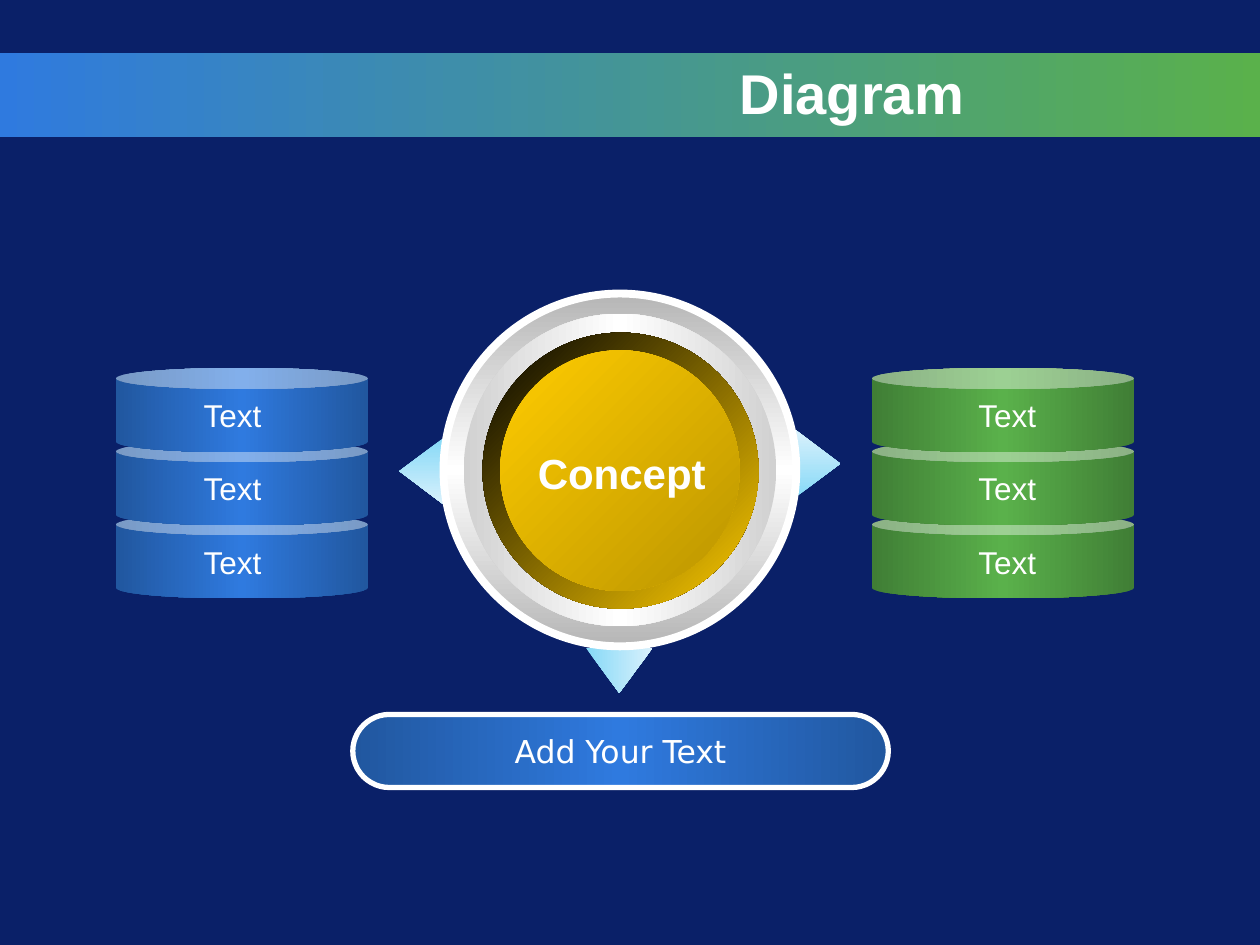
from dataclasses import dataclass

from lxml import etree
from pptx import Presentation
from pptx.dml.color import RGBColor
from pptx.enum.shapes import MSO_SHAPE
from pptx.enum.text import MSO_ANCHOR, MSO_AUTO_SIZE, PP_ALIGN
from pptx.oxml.ns import qn
from pptx.util import Inches, Pt

RECT, ELLIPSE, CAN = MSO_SHAPE.RECTANGLE, MSO_SHAPE.OVAL, MSO_SHAPE.CAN
UP_ARROW, PILL = MSO_SHAPE.UP_ARROW, MSO_SHAPE.ROUNDED_RECTANGLE
TOP, MIDDLE = MSO_ANCHOR.TOP, MSO_ANCHOR.MIDDLE
CENTER, RIGHT = PP_ALIGN.CENTER, PP_ALIGN.RIGHT
FIT = MSO_AUTO_SIZE.SHAPE_TO_FIT_TEXT

COLORS = {
    "background": "0A2068",
    "white": "FFFFFF",
    "black": "000000",
    "blue": "2F7ADF",
    "green": "5AB14B",
    "gold": "FFCC00",
    "sky": "85D9F7",
    "pale sky": "DAF1FC",
}
EDGE_SHADE = 46275  # thousandths of a percent of the base colour


@dataclass(frozen=True)
class Stop:
    position: int
    color: str
    shade: int = 0


@dataclass(frozen=True)
class Box:
    left: float
    top: float
    width: float
    height: float

    def lengths(self) -> list:
        return [Inches(v) for v in (self.left, self.top, self.width, self.height)]


@dataclass(frozen=True)
class Stack:
    color: str
    left: float
    width: float
    label_left: float


@dataclass(frozen=True)
class Pointer:
    box: Box
    rotation: int


@dataclass(frozen=True)
class Disc:
    box: Box
    stops: tuple
    angle: int
    outline: float = 0


def sheen(color: str, shade: int = EDGE_SHADE) -> tuple:
    """Bright in the middle, darker at both ends."""
    return Stop(0, color, shade), Stop(50, color), Stop(100, color, shade)


def set_gradient(shape, stops: tuple, angle: int) -> None:
    shape.fill.gradient()
    gradient = shape._element.spPr.find(qn("a:gradFill"))
    stop_list = gradient.find(qn("a:gsLst"))
    for old_stop in list(stop_list):
        stop_list.remove(old_stop)
    for stop in stops:
        entry = etree.SubElement(stop_list, qn("a:gs"), pos=str(stop.position * 1000))
        color = etree.SubElement(entry, qn("a:srgbClr"), val=COLORS[stop.color])
        if stop.shade:
            etree.SubElement(color, qn("a:shade"), val=str(stop.shade))
    gradient.find(qn("a:lin")).set("ang", str(angle * 60000))


def add_filled(slide, kind, box: Box, stops: tuple, angle: int = 0,
               outline: float = 0, adjustments: tuple = ()):
    shape = slide.shapes.add_shape(kind, *box.lengths())
    shape.shadow.inherit = False
    for index, value in enumerate(adjustments):
        shape.adjustments[index] = value
    set_gradient(shape, stops, angle)
    if outline:
        shape.line.color.rgb = RGBColor.from_string(COLORS["white"])
        shape.line.width = Pt(outline)
    else:
        shape.line.fill.background()
    return shape


def write(shape, text: str, size: float, font: str = "Arial", bold: bool = False,
          align=CENTER, anchor=TOP, wrap: bool = False) -> None:
    frame = shape.text_frame
    for name, value in {"word_wrap": wrap, "vertical_anchor": anchor}.items():
        setattr(frame, name, value)
    paragraph = frame.paragraphs[0]
    paragraph.alignment = align
    run = paragraph.add_run()
    run.text = text
    for name, value in {"size": Pt(size), "name": font, "bold": bold}.items():
        setattr(run.font, name, value)
    run.font.color.rgb = RGBColor.from_string(COLORS["white"])


def add_label(slide, box: Box, text: str, size: float, bold: bool = False) -> None:
    label = slide.shapes.add_textbox(*box.lengths())
    write(label, text, size, bold=bold)
    label.text_frame.auto_size = FIT


def add_pointer(slide, pointer: Pointer) -> None:
    arrow = add_filled(slide, UP_ARROW, pointer.box,
                       (Stop(0, "sky"), Stop(100, "pale sky")),
                       adjustments=(0.517, 1))
    arrow.rotation = pointer.rotation
    arrow._element.spPr.find(qn("a:xfrm")).set("flipH", "1")


POINTERS = (
    Pointer(Box(3.08, 3.56, 0.54, 0.36), 270),
    Pointer(Box(6.22, 3.5, 0.54, 0.36), 90),
    Pointer(Box(4.65, 5.14, 0.53, 0.36), 180),
)
DISCS = (
    Disc(Box(3.52, 2.33, 2.8, 2.8), sheen("white"), 90, 4.5),
    Disc(Box(3.68, 2.49, 2.48, 2.48), sheen("white", 63529), 0),
    Disc(Box(3.83, 2.64, 2.19, 2.19), (Stop(0, "black"), Stop(100, "gold")), 45),
    Disc(Box(3.97, 2.78, 1.9, 1.91),
         (Stop(0, "gold"), Stop(100, "gold", 49020)), 45),
)
STACKS = (Stack("blue", 0.92, 2, 1.5), Stack("green", 6.92, 2.08, 7.65))
LAYER_TEXTS = ("Text", "Text", "Text")
LAYER_TOP, LAYER_HEIGHT, LAYER_STEP = 2.92, 0.67, 0.58
LABEL_TOP, LABEL_STEP = 3.09, 0.585


def main() -> None:
    deck = Presentation()
    deck.slide_width, deck.slide_height = Inches(10), Inches(7.5)
    slide = deck.slides.add_slide(deck.slide_layouts[6])
    slide.background.fill.solid()
    slide.background.fill.fore_color.rgb = RGBColor.from_string(COLORS["background"])

    # Title band
    add_filled(slide, RECT, Box(0, 0.42, 10, 0.67),
               (Stop(0, "blue"), Stop(100, "green")))
    title = slide.shapes.add_textbox(*Box(0.5, 0.42, 7.25, 0.62).lengths())
    write(title, "Diagram", 32, bold=True, align=RIGHT, anchor=MIDDLE, wrap=True)

    # Central button with its pointers
    for pointer in POINTERS:
        add_pointer(slide, pointer)
    for disc in DISCS:
        add_filled(slide, ELLIPSE, disc.box, disc.stops, disc.angle, disc.outline)

    # Cylinder stacks, lowest layer first
    for stack in STACKS:
        for row in reversed(range(len(LAYER_TEXTS))):
            layer = Box(stack.left, LAYER_TOP + row * LAYER_STEP,
                        stack.width, LAYER_HEIGHT)
            add_filled(slide, CAN, layer, sheen(stack.color), adjustments=(0.25,))

    add_label(slide, Box(4.17, 3.5, 1.53, 0.5), "Concept", 24, bold=True)

    # Caption bar
    caption = add_filled(slide, PILL, Box(2.8, 5.67, 4.25, 0.58), sheen("blue"),
                         outline=3, adjustments=(0.5,))
    write(caption, "Add Your Text", 18, font="DejaVu Sans", anchor=MIDDLE)

    # Layer labels
    for stack in STACKS:
        for row, text in enumerate(LAYER_TEXTS):
            add_label(slide, Box(stack.label_left, LABEL_TOP + row * LABEL_STEP,
                                 0.69, 0.4), text, 18)

    deck.save("out.pptx")


if __name__ == "__main__":
    main()
